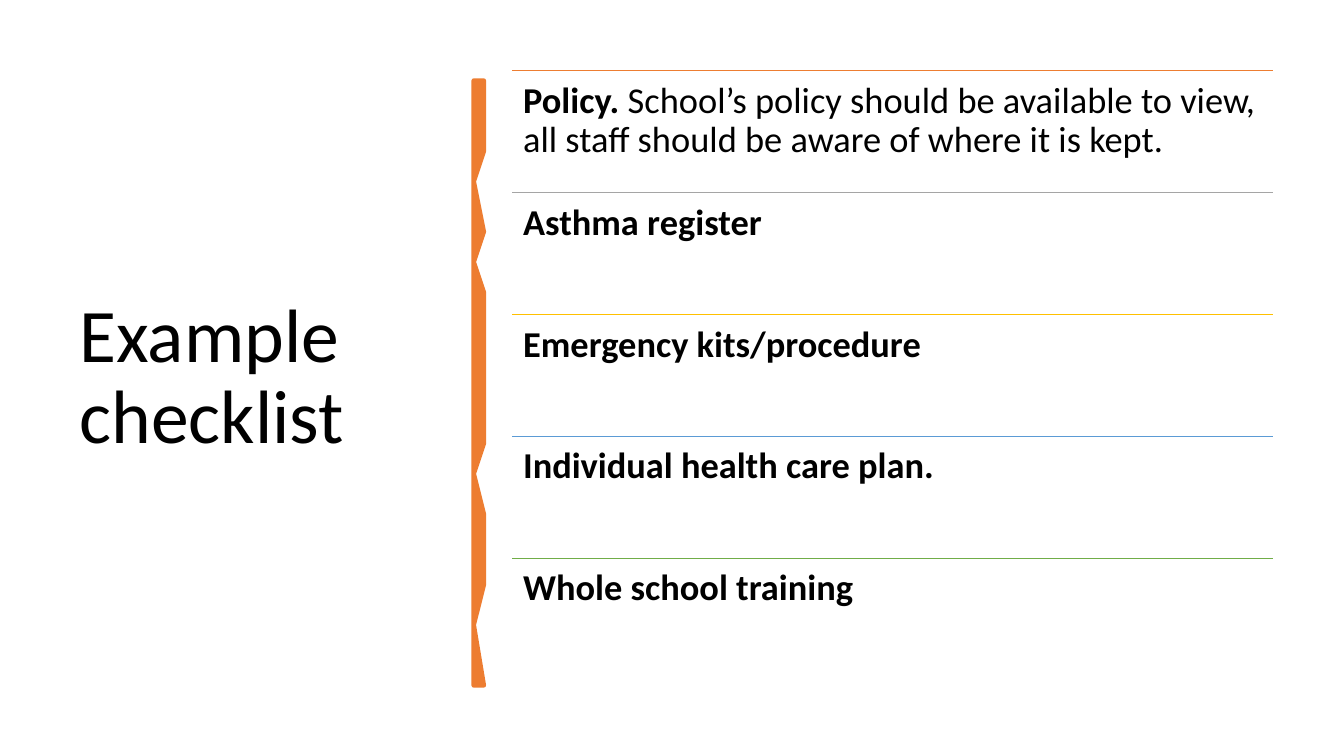
from dataclasses import dataclass

from lxml.etree import SubElement
from pptx import Presentation
from pptx.dml.color import RGBColor
from pptx.enum.shapes import MSO_CONNECTOR
from pptx.enum.text import MSO_ANCHOR, MSO_AUTO_SIZE, PP_ALIGN
from pptx.oxml.ns import qn
from pptx.util import Inches, Pt


@dataclass(frozen=True)
class Theme:
    font: str = "Calibri"
    ink: str = "000000"
    paper: str = "FFFFFF"
    orange: str = "ED7D31"
    gray: str = "A5A5A5"
    gold: str = "FFC000"
    blue: str = "5B9BD5"
    green: str = "70AD47"
    title_size: int = 54
    item_size: int = 26
    line_spacing: float = 0.9
    item_gap: int = 9
    item_inset: float = 1.1
    rule_width: int = 1
    brush_width: float = 3.25


CELL = Inches(0.1)
COLUMNS, ROWS = 133.33, 75
TITLE_BOX = (6.9, 7, 37.4, 61.1)
LIST_LEFT, LIST_TOP, LIST_WIDTH, ITEM_HEIGHT = 50.8, 7, 75.5, 12.1
BRUSH_RIGHT = [
    (47.5, 8.4), (47.6, 11.5), (47.5, 14.6), (47.4, 18), (47.5, 22.6),
    (47.45, 26), (47.5, 29.4), (47.6, 33.5), (47.65, 38), (47.5, 43.6),
    (47.35, 47), (47.5, 51), (47.65, 54.7), (47.5, 58.4), (47.4, 62),
    (47.5, 67.6),
]
BRUSH_LEFT = [
    (47.3, 67.6), (47.15, 64.4), (47.3, 61.3), (47.35, 58), (47.15, 53.9),
    (47.2, 50), (47.3, 47.1), (47.15, 43), (47.3, 38.6), (47.15, 34),
    (47.2, 30), (47.15, 27), (47.3, 23.8), (47.35, 20), (47.15, 17),
    (47.4, 12.5), (47.3, 8.4),
]


def cells(*counts):
    return [round(count * CELL) for count in counts]


class ChecklistPage:
    def __init__(self, deck, theme):
        self.theme = theme
        self.page = deck.slides.add_slide(deck.slide_layouts[5])
        fill = self.page.background.fill
        fill.solid()
        fill.fore_color.rgb = RGBColor.from_string(theme.paper)

    def add_spans(self, para, spans, size):
        para.alignment = PP_ALIGN.LEFT
        para.line_spacing = self.theme.line_spacing
        for text, bold in spans:
            span = para.add_run()
            span.text = text
            span.font.name = self.theme.font
            span.font.size = Pt(size)
            span.font.bold = bold
            span.font.color.rgb = RGBColor.from_string(self.theme.ink)

    def title(self, text, area):
        box = self.page.shapes.title
        box.left, box.top, box.width, box.height = cells(*area)
        frame = box.text_frame
        frame.word_wrap = True
        frame.auto_size = MSO_AUTO_SIZE.NONE
        frame.vertical_anchor = MSO_ANCHOR.MIDDLE
        self.add_spans(frame.paragraphs[0], [(text, False)], self.theme.title_size)

    def brush(self, outline, color):
        builder = self.page.shapes.build_freeform(*outline[0], scale=CELL)
        builder.add_line_segments(outline[1:], close=True)
        stroke = builder.convert_to_shape()
        stroke.shadow.inherit = False
        stroke.fill.solid()
        stroke.fill.fore_color.rgb = RGBColor.from_string(color)
        stroke.line.color.rgb = RGBColor.from_string(color)
        stroke.line.width = Pt(self.theme.brush_width)
        SubElement(stroke._element.spPr.find(qn("a:ln")), qn("a:round"))

    def rule(self, left, top, width, color):
        line = self.page.shapes.add_connector(
            MSO_CONNECTOR.STRAIGHT, *cells(left, top, left + width, top))
        line.line.color.rgb = RGBColor.from_string(color)
        line.line.width = Pt(self.theme.rule_width)
        SubElement(line._element.spPr, qn("a:effectLst"))

    def item(self, spans, area):
        frame = self.page.shapes.add_textbox(*cells(*area)).text_frame
        frame.word_wrap = True
        frame.vertical_anchor = MSO_ANCHOR.TOP
        inset = cells(self.theme.item_inset)[0]
        frame.margin_left = frame.margin_right = inset
        frame.margin_top = frame.margin_bottom = inset
        para = frame.paragraphs[0]
        para.space_after = Pt(self.theme.item_gap)
        self.add_spans(para, spans, self.theme.item_size)


def main():
    deck = Presentation()
    deck.slide_width, deck.slide_height = cells(COLUMNS, ROWS)
    theme = Theme()
    checklist = ChecklistPage(deck, theme)
    checklist.title("Example checklist", TITLE_BOX)
    checklist.brush(BRUSH_RIGHT + BRUSH_LEFT, theme.orange)
    items = [
        (theme.orange, [
            ("Policy. ", True),
            ("School’s policy should be available to view, all staff "
             "should be aware of where it is kept.", False),
        ]),
        (theme.gray, [("Asthma register", True)]),
        (theme.gold, [("Emergency kits/procedure", True)]),
        (theme.blue, [("Individual health care plan.", True)]),
        (theme.green, [("Whole school training", True)]),
    ]
    for index, (color, spans) in enumerate(items):
        top = LIST_TOP + index * ITEM_HEIGHT
        checklist.rule(LIST_LEFT, top, LIST_WIDTH, color)
        checklist.item(spans, (LIST_LEFT, top, LIST_WIDTH, ITEM_HEIGHT))
    deck.save("out.pptx")


if __name__ == "__main__":
    main()
